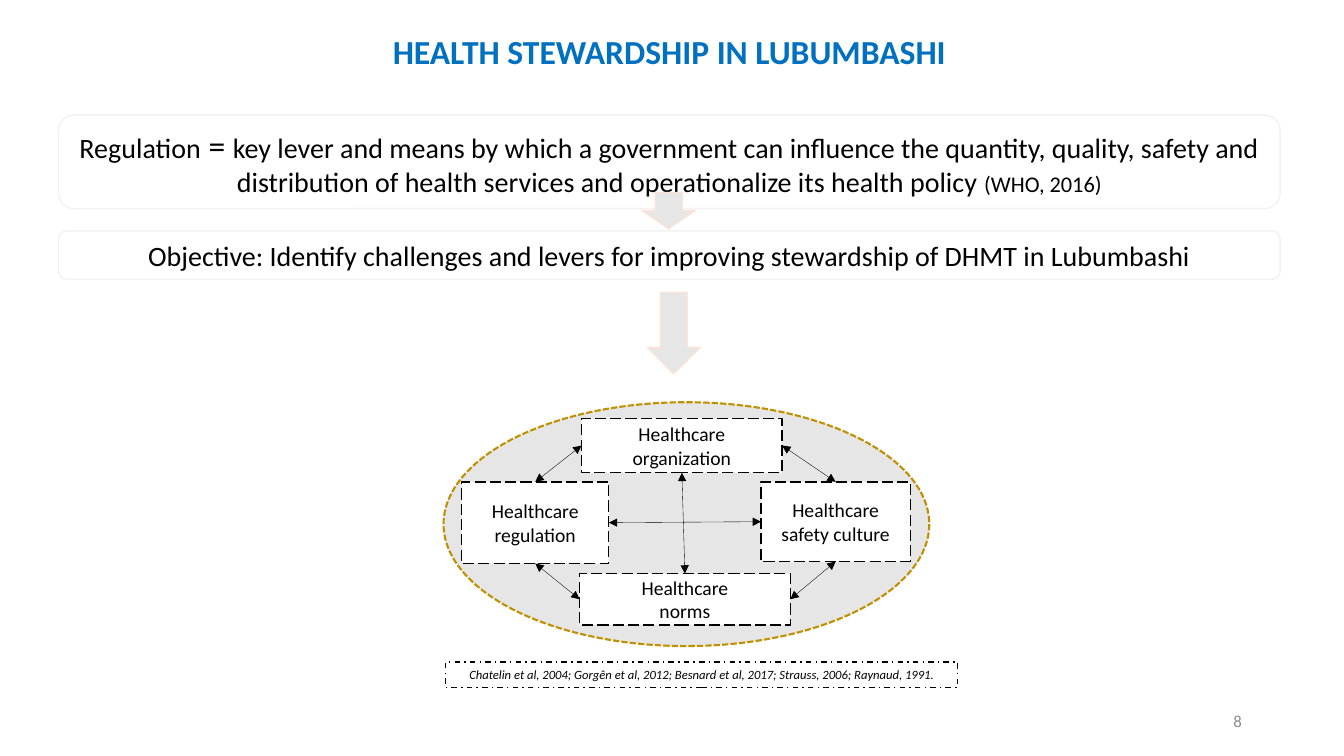
import pptx
import pptx.dml.color
import pptx.enum.dml
import pptx.enum.shapes
import pptx.enum.text
import pptx.oxml
import pptx.oxml.ns
import pptx.util

Pt = pptx.util.Pt
Shape = pptx.enum.shapes.MSO_SHAPE
Dash = pptx.enum.dml.MSO_LINE
Anchor = pptx.enum.text.MSO_ANCHOR
Align = pptx.enum.text.PP_ALIGN
AutoSize = pptx.enum.text.MSO_AUTO_SIZE

MARGIN, WIDTH = 41.8, 872.6
TOP, LEFT, BOTTOM, RIGHT = range(4)


def color(hex_value):
    """Turn a hex string into a colour."""
    return pptx.dml.color.RGBColor.from_string(hex_value)


def style_font(font, size, hex_value="000000"):
    """Give a font the deck's typeface, a size and a colour."""
    font.name = "Calibri"
    font.size = Pt(size)
    font.color.rgb = color(hex_value)


def write(shape, lines, size, hex_value="000000", align=Align.CENTER, anchor=Anchor.MIDDLE):
    """Fill a shape with paragraphs; each is a string or a list of (text, size) spans."""
    frame = shape.text_frame
    frame.word_wrap = True
    frame.vertical_anchor = anchor
    for index, line in enumerate(lines):
        para = frame.paragraphs[0] if index == 0 else frame.add_paragraph()
        para.alignment = align
        style_font(para.font, size, hex_value)
        if isinstance(line, str):
            para.text = line
            continue
        for text, span_size in line:
            span = para.add_run()
            span.text = text
            style_font(span.font, span_size, hex_value)
    return frame


def add_block(page, kind, box, fill, line, weight=1, dash=None):
    """Add a preset shape with a flat fill and outline."""
    shape = page.shapes.add_shape(kind, *map(Pt, box))
    shape.shadow.inherit = False
    shape.fill.solid()
    shape.fill.fore_color.rgb = color(fill)
    shape.line.color.rgb = color(line)
    shape.line.width = Pt(weight)
    if dash is not None:
        shape.line.dash_style = dash
    return shape


def add_double_arrow(page, start, start_side, end, end_side):
    """Join the sides of two shapes with a thin two-headed arrow."""
    link = page.shapes.add_connector(pptx.enum.shapes.MSO_CONNECTOR.STRAIGHT, 0, 0, 0, 0)
    link.begin_connect(start, start_side)
    link.end_connect(end, end_side)
    link.line.color.rgb = color("000000")
    link.line.width = Pt(0.25)
    outline = link.line._get_or_add_ln()
    for tag in ("headEnd", "tailEnd"):
        outline.append(pptx.oxml.parse_xml(
            f'<a:{tag} {pptx.oxml.ns.nsdecls("a")} type="triangle"/>'))
    link._element.spPr.append(pptx.oxml.parse_xml(
        f'<a:effectLst {pptx.oxml.ns.nsdecls("a")}/>'))


def add_title(page, box):
    """Place and format the title."""
    title = page.shapes.title
    title.left, title.top, title.width, title.height = map(Pt, box)
    frame = write(title, ["HEALTH STEWARDSHIP IN LUBUMBASHI"], 24, "0070C0")
    frame.auto_size = AutoSize.NONE
    para = frame.paragraphs[0]
    para.font.bold = True
    para.line_spacing = 0.9


def add_statement(page, box, line, space_after=0):
    """Add a rounded panel with a statement."""
    panel = add_block(page, Shape.ROUNDED_RECTANGLE, box, "FFFFFF", "F2F2F2")
    frame = write(panel, [line], 20, anchor=Anchor.TOP)
    frame.auto_size = AutoSize.SHAPE_TO_FIT_TEXT
    frame.paragraphs[0].space_after = Pt(space_after)


def add_framework(page, box):
    """Draw the ellipse with its four linked dimensions of healthcare."""
    left, top = box[:2]
    add_block(page, Shape.OVAL, box, "E7E6E6", "BF9000", 1.5, Dash.SQUARE_DOT)
    dimensions = {
        "norms": (97.2, 122.4, 150.5, 36.7, ["Healthcare", "norms"]),
        "organization": (98.6, 11.5, 143.3, 38.9, ["Healthcare organization"]),
        "culture": (226.8, 56.9, 106.6, 56.9, ["Healthcare safety culture"]),
        "regulation": (13, 56.9, 105.1, 58.3, ["Healthcare\vregulation"]),
    }
    nodes = {}
    for name, (x, y, width, height, lines) in dimensions.items():
        nodes[name] = add_block(page, Shape.RECTANGLE, (left + x, top + y, width, height),
                                "FFFFFF", "000000", 1, Dash.LONG_DASH)
        write(nodes[name], lines, 14)
    for start, start_side, end, end_side in (
        ("organization", RIGHT, "culture", TOP),
        ("regulation", TOP, "organization", LEFT),
        ("norms", RIGHT, "culture", BOTTOM),
        ("regulation", BOTTOM, "norms", LEFT),
        ("organization", BOTTOM, "norms", TOP),
        ("regulation", RIGHT, "culture", LEFT),
    ):
        add_double_arrow(page, nodes[start], start_side, nodes[end], end_side)


def add_references(page, box):
    """Add the framed list of references."""
    panel = add_block(page, Shape.RECTANGLE, box, "FFFFFF", "000000", 1, Dash.DASH_DOT)
    citation = ("Chatelin et al, 2004; Gorgên et al, 2012; Besnard et al, 2017; "
                "Strauss, 2006; Raynaud, 1991.")
    frame = write(panel, [citation], 9, anchor=Anchor.TOP)
    frame.auto_size = AutoSize.SHAPE_TO_FIT_TEXT
    frame.paragraphs[0].font.italic = True
    frame.paragraphs[0].space_after = Pt(6.7)


def add_page_number(page, box):
    """Add the page number."""
    write(page.shapes.add_textbox(*map(Pt, box)), ["8"], 12, "8C8C8C", Align.RIGHT)


def main():
    """Build and save the deck."""
    deck = pptx.Presentation()
    deck.slide_width, deck.slide_height = Pt(960), Pt(540)
    page = deck.slides.add_slide(deck.slide_layouts[5])
    add_page_number(page, (678.2, 500.4, 216, 28.8))
    add_title(page, (MARGIN, 15.1, WIDTH, 46.1))
    add_statement(page, (MARGIN, 82.1, WIDTH, 67), [
        ("Regulation", 20), (" = ", 24),
        ("key lever and means by which a government can influence the quantity, quality, "
         "safety and distribution of health services and operationalize its health policy ", 20),
        ("(WHO, 2016)", 16)], 6.7)
    add_statement(page, (MARGIN, 164.9, WIDTH, 34.6),
                  "Objective: Identify challenges and levers for improving stewardship "
                  "of DHMT in Lubumbashi")
    add_framework(page, (316.8, 287.3, 347, 174.2))
    add_references(page, (318.2, 473, 365.8, 18))
    for box in ((458.6, 137.5, 38.2, 25.9), (462.2, 208.8, 38.2, 58.3)):
        add_block(page, Shape.DOWN_ARROW, box, "E7E6E6", "FBE5D6")
    deck.save("out.pptx")


if __name__ == "__main__":
    main()
